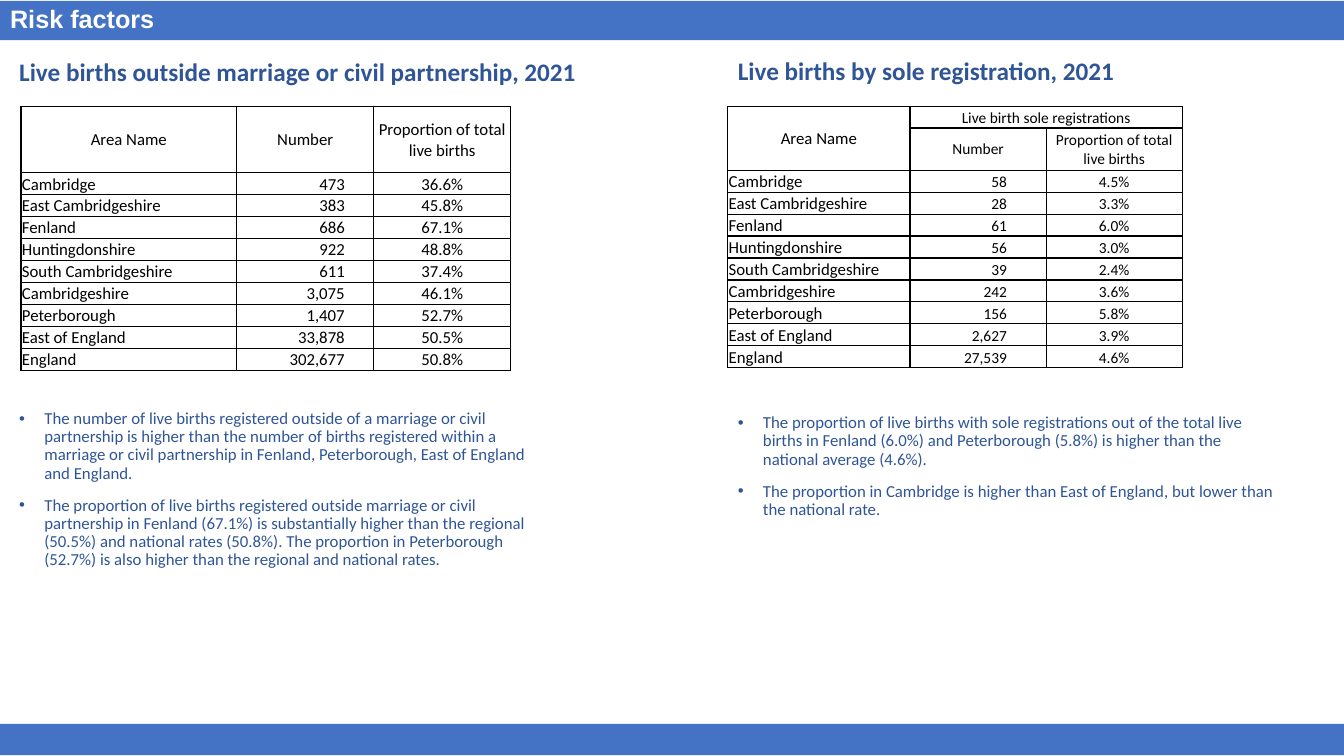
import dataclasses
import typing

import pptx
import pptx.dml.color
import pptx.enum.shapes
import pptx.enum.text
import pptx.oxml
import pptx.oxml.ns
import pptx.util

Pt = pptx.util.Pt
ALIGN = pptx.enum.text.PP_ALIGN
ANCHOR = pptx.enum.text.MSO_ANCHOR
COLOURS = {"band": "4472C4", "text": "2F5597", "grid": "000000", "title": "FFFFFF"}
WIDTH, HEIGHT = 960, 540
Box = tuple[float, float, float, float]


@dataclasses.dataclass
class Style:
    size: float
    colour: str
    bold: bool = False
    name: str = "Calibri"


@dataclasses.dataclass
class TextBlock:
    idx: int
    box: Box
    lines: list[str]
    style: Style
    anchor: typing.Any
    before: float = 10
    bullet: bool = False


@dataclasses.dataclass
class BirthTable:
    left: float
    cols: list[float]
    header_heights: list[float]
    headers: list[list[str]]
    numbers: list[str]
    shares: list[str]
    size: float  # text size of the figures
    number_margin: float  # gap to the right of the numbers
    merges: list[tuple[int, int, int, int]]


def rgb(key: str) -> pptx.dml.color.RGBColor:
    return pptx.dml.color.RGBColor.from_string(COLOURS[key])


def write(p: typing.Any, text: str, style: Style) -> None:
    r = p.add_run()
    r.text = text
    for key, value in {"name": style.name, "size": Pt(style.size), "bold": style.bold}.items():
        setattr(r.font, key, value)
    r.font.color.rgb = rgb(style.colour)


def place(sp: typing.Any, box: Box) -> None:
    for key, value in zip(("left", "top", "width", "height"), box):
        setattr(sp, key, Pt(value))


def add_bullet(p: typing.Any) -> None:
    pPr = p._p.get_or_add_pPr()
    pPr.set("marL", str(Pt(18)))
    pPr.set("indent", str(Pt(-18)))
    for tag, key, value in (("buFont", "typeface", "Arial"), ("buChar", "char", "•")):
        pptx.oxml.ns.qn(f"a:{tag}")
        el = pPr.makeelement(pptx.oxml.ns.qn(f"a:{tag}"), {key: value})
        pPr.append(el)


def add_text(slide: typing.Any, block: TextBlock) -> None:
    sp = slide.placeholders[block.idx]
    place(sp, block.box)
    tf = sp.text_frame
    for key, value in {"auto_size": pptx.enum.text.MSO_AUTO_SIZE.NONE,
                       "word_wrap": True, "vertical_anchor": block.anchor}.items():
        setattr(tf, key, value)
    for i, line in enumerate(block.lines):
        p = tf.add_paragraph() if i else tf.paragraphs[0]
        for key, value in {"alignment": ALIGN.LEFT, "line_spacing": 0.9,
                           "space_before": Pt(block.before)}.items():
            setattr(p, key, value)
        if block.bullet:
            add_bullet(p)
        write(p, line, block.style)


def add_band(slide: typing.Any, top: float, height: float) -> None:
    sp = slide.shapes.add_shape(pptx.enum.shapes.MSO_SHAPE.RECTANGLE,
                                Pt(0), Pt(top), Pt(WIDTH), Pt(height))
    sp.shadow.inherit = False
    sp.fill.solid()
    sp.fill.fore_color.rgb = rgb("band")
    sp.line.fill.background()
    slide.shapes._spTree.insert(2, sp._element)  # behind the text


def add_borders(cell: typing.Any) -> None:
    tcPr = cell._tc.get_or_add_tcPr()
    for side in "LRTB":
        tcPr.append(pptx.oxml.parse_xml(
            f'<a:ln{side} {pptx.oxml.ns.nsdecls("a")} w="{Pt(1)}"><a:solidFill>'
            f'<a:srgbClr val="{COLOURS["grid"]}"/></a:solidFill></a:ln{side}>'))


def add_births(slide: typing.Any, t: BirthTable) -> None:
    rows = t.headers + [list(row) for row in zip(AREAS, t.numbers, t.shares)]
    heights = t.header_heights + [ROW_HEIGHT] * len(AREAS)
    tbl = slide.shapes.add_table(len(rows), len(t.cols), Pt(t.left), Pt(TABLE_TOP),
                                 Pt(sum(t.cols)), Pt(sum(heights))).table
    tbl.first_row = tbl.horz_banding = False
    for col, width in zip(tbl.columns, t.cols):
        col.width = Pt(width)
    for row, height in zip(tbl.rows, heights):
        row.height = Pt(height)
    for i, row in enumerate(rows):
        header = i < len(t.headers)
        for j, text in enumerate(row):
            cell = tbl.cell(i, j)
            number = j == 1 and not header
            add_borders(cell)
            cell.fill.background()
            for key, value in {"margin_left": Pt(0.7), "margin_top": Pt(0.7), "margin_bottom": Pt(0),
                               "margin_right": Pt(t.number_margin if number else 0.7),
                               "vertical_anchor": ANCHOR.MIDDLE if header else ANCHOR.BOTTOM}.items():
                setattr(cell, key, value)
            p = cell.text_frame.paragraphs[0]
            p.alignment = ALIGN.CENTER if header else (ALIGN.LEFT, ALIGN.RIGHT, ALIGN.CENTER)[j]
            if text:
                write(p, text, Style(t.size if j else 12, "grid"))
    for r1, c1, r2, c2 in t.merges:
        tbl.cell(r1, c1).merge(tbl.cell(r2, c2))


TABLE_TOP, ROW_HEIGHT = 76.3, 15.7
AREAS = ["Cambridge", "East Cambridgeshire", "Fenland", "Huntingdonshire", "South Cambridgeshire",
         "Cambridgeshire", "Peterborough", "East of England", "England"]
SHARE = "Proportion of total live births"
HEADING = Style(18, "text", True)
BODY = Style(12, "text")

TEXTS = [
    TextBlock(0, (0, 2.2, WIDTH, 25.2), ["Risk factors"],
              Style(18, "title", True, "Arial"), ANCHOR.MIDDLE, before=0),
    TextBlock(1, (6.5, 34.6, 467.3, 31), ["Live births outside marriage or civil partnership, 2021"],
              HEADING, ANCHOR.BOTTOM),
    TextBlock(3, (519.8, 34.2, 432, 31), ["Live births by sole registration, 2021"],
              HEADING, ANCHOR.BOTTOM),
    TextBlock(2, (6.5, 289.4, 385.2, 139), [
        "The number of live births registered outside of a marriage or civil partnership is higher "
        "than the number of births registered within a marriage or civil partnership in Fenland, "
        "Peterborough, East of England and England.",
        "The proportion of live births registered outside marriage or civil partnership in Fenland "
        "(67.1%) is substantially higher than the regional (50.5%) and national rates (50.8%). The "
        "proportion in Peterborough (52.7%) is also higher than the regional and national rates.",
    ], BODY, ANCHOR.TOP, bullet=True),
    TextBlock(4, (519.8, 292.3, 398.9, 136), [
        "The proportion of live births with sole registrations out of the total live births in "
        "Fenland (6.0%) and Peterborough (5.8%) is higher than the national average (4.6%).",
        "The proportion in Cambridge is higher than East of England, but lower than the national rate.",
    ], BODY, ANCHOR.TOP, bullet=True),
]

TABLES = [
    BirthTable(15, [154.1, 97.9, 97.9], [47], [["Area Name", "Number", SHARE]],
               ["473", "383", "686", "922", "611", "3,075", "1,407", "33,878", "302,677"],
               ["36.6%", "45.8%", "67.1%", "48.8%", "37.4%", "46.1%", "52.7%", "50.5%", "50.8%"],
               12, 20.7, []),
    BirthTable(519.8, [130.3, 97.2, 97.2], [15.1, 30.2],
               [["Area Name", "Live birth sole registrations", ""], ["", "Number", SHARE]],
               ["58", "28", "61", "56", "39", "242", "156", "2,627", "27,539"],
               ["4.5%", "3.3%", "6.0%", "3.0%", "2.4%", "3.6%", "5.8%", "3.9%", "4.6%"],
               11, 28, [(0, 0, 1, 0), (0, 1, 0, 2)]),
]


def main() -> None:
    prs = pptx.Presentation()
    prs.slide_width, prs.slide_height = Pt(WIDTH), Pt(HEIGHT)
    slide = prs.slides.add_slide(prs.slide_layouts.get_by_name("Comparison"))
    # Header and footer bands
    for top, height in ((0.7, 28), (517, 22.4)):
        add_band(slide, top, height)
    # Title, headings and bullet lists
    for block in TEXTS:
        add_text(slide, block)
    # Tables of births by area
    for table in TABLES:
        add_births(slide, table)
    prs.save("out.pptx")


if __name__ == "__main__":
    main()
